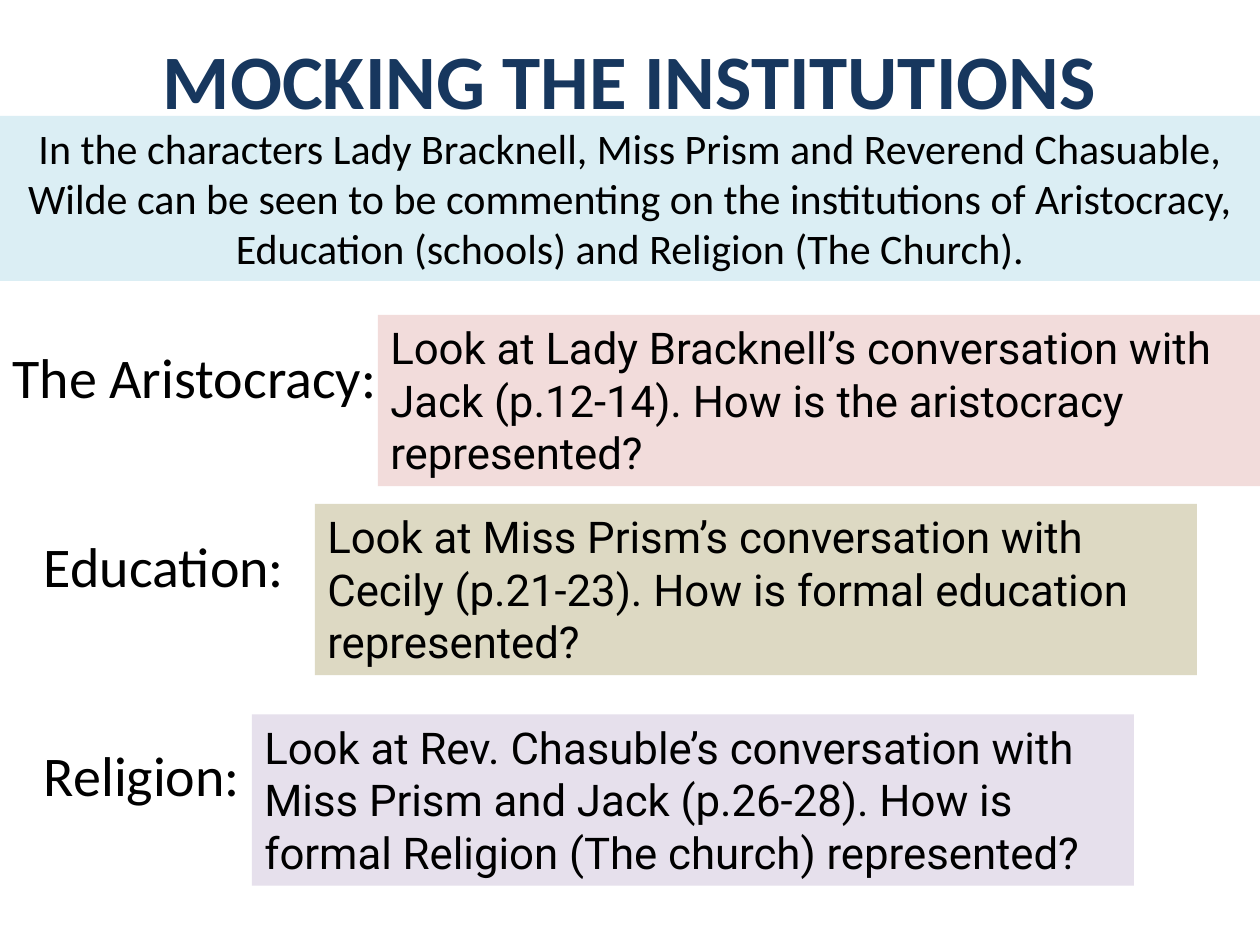
from pptx import Presentation
from pptx.dml.color import RGBColor
from pptx.enum import shapes, text
from pptx.util import Inches, Pt

TITLE = "MOCKING THE INSTITUTIONS"
INTRO = ("In the characters Lady Bracknell, Miss Prism and Reverend Chasuable, "
         "Wilde can be seen to be commenting on the institutions of Aristocracy, "
         "Education (schools) and Religion (The Church).")

# label, label left, label top, task, task left, task top, task fill
INSTITUTIONS = [
    ("The Aristocracy:", 0, 2.67,
     "Look at Lady Bracknell’s conversation with Jack (p.12-14). "
     "How is the aristocracy represented?", 3, 2.5, "F2DCDB"),
    ("Education:", 0.25, 4.17,
     "Look at Miss Prism’s conversation with Cecily (p.21-23). "
     "How is formal education represented?", 2.5, 4, "DDD9C3"),
    ("Religion:", 0.25, 5.83,
     "Look at Rev. Chasuble’s conversation with Miss Prism and Jack (p.26-28). "
     "How is formal Religion (The church) represented?", 2, 5.67, "E6E0EC"),
]
LABEL_SIZE = (3.58, 1.25)
TASK_SIZE = (7, 1.36)

prs = Presentation()
prs.slide_width, prs.slide_height = Inches(10), Inches(7.5)
s = prs.slides.add_slide(prs.slide_layouts[6])


def rgb(value):
    return RGBColor.from_string(value)


def add_text(content, box, size, font="Calibri", color="000000", fill=None,
             bold=False, align=text.PP_ALIGN.LEFT, anchor=text.MSO_ANCHOR.TOP):
    """Add a text box, or a filled rectangle when a fill is given."""
    place = [Inches(v) for v in box]
    if fill:
        sp = s.shapes.add_shape(shapes.MSO_SHAPE.RECTANGLE, *place)
        sp.shadow.inherit = False
        sp.fill.solid()
        sp.fill.fore_color.rgb = rgb(fill)
        sp.line.fill.background()
    else:
        sp = s.shapes.add_textbox(*place)
    tf = sp.text_frame
    tf.word_wrap = True
    tf.vertical_anchor = anchor
    tf.text = content
    p = tf.paragraphs[0]
    p.alignment = align
    f = p.runs[0].font
    f.name, f.size, f.bold = font, Pt(size), bold
    f.color.rgb = rgb(color)
    return p


# Title
add_text(TITLE, (0, 0, 10, 1.25), 44, color="17375E", bold=True,
         align=text.PP_ALIGN.CENTER, anchor=text.MSO_ANCHOR.MIDDLE)

# Institution labels
for label, left, top, *_ in INSTITUTIONS:
    p = add_text(label, (left, top, *LABEL_SIZE), 32)
    p.space_before = Pt(2)

# Introduction band
add_text(INTRO, (0, 0.92, 10, 1.31), 24, fill="DBEEF4",
         align=text.PP_ALIGN.CENTER)

# Task boxes
for *_, task, left, top, fill in INSTITUTIONS:
    add_text(task, (left, top, *TASK_SIZE), 25, font="Roboto", fill=fill)

prs.save("out.pptx")
